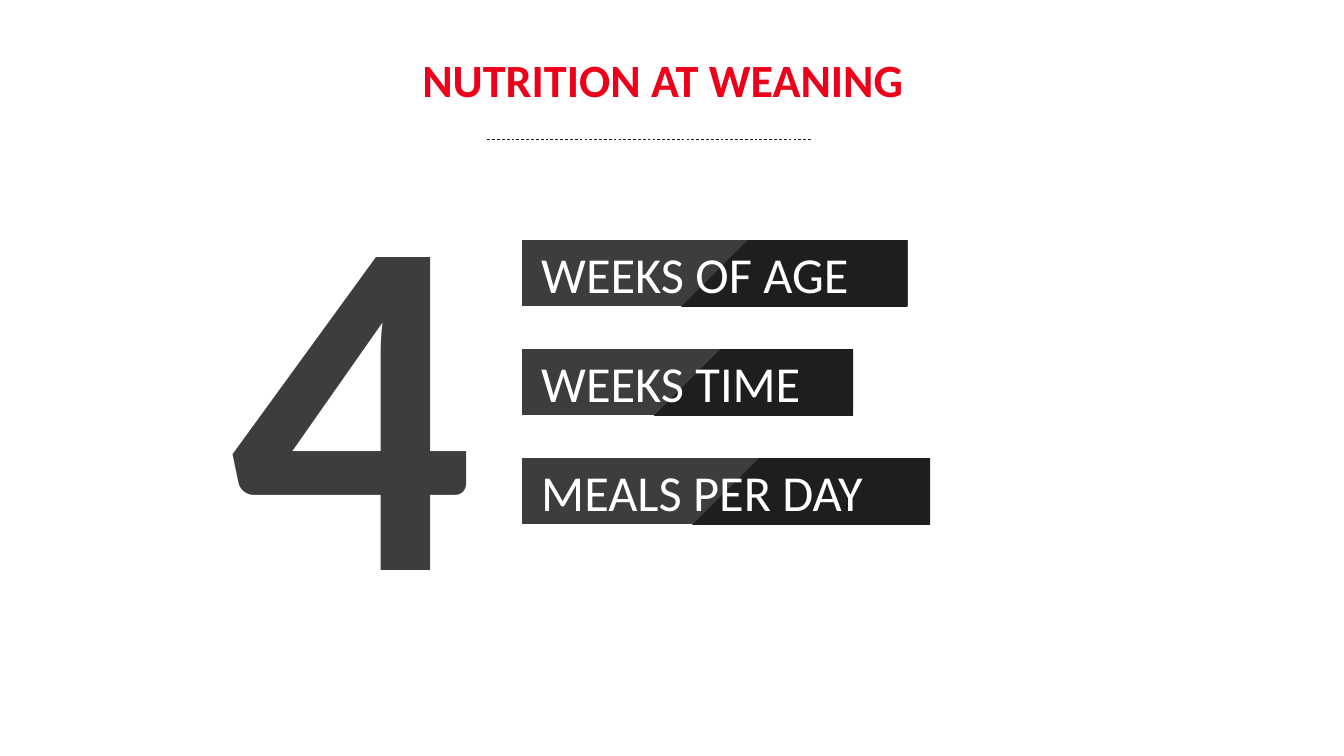
"""Builds the "Nutrition at weaning" slide."""
from dataclasses import dataclass

import pptx
import pptx.dml.color
import pptx.enum.dml
import pptx.enum.shapes
import pptx.enum.text
import pptx.oxml
import pptx.oxml.ns
import pptx.util

Inches = pptx.util.Inches
RGB = pptx.dml.color.RGBColor.from_string
Anchor = pptx.enum.text.MSO_ANCHOR


@dataclass(frozen=True)
class Theme:
    font: str = "Calibri"
    red: str = "EC001A"
    grey: str = "3D3D3C"
    black: str = "1E1E1E"
    white: str = "FFFFFF"
    numeral_size: int = 689
    title_size: int = 66
    label_size: int = 72


theme = Theme()


def write(shape, text, size, color, bold=False, wrap=True, anchor=Anchor.TOP):
    frame = shape.text_frame
    frame.word_wrap = wrap
    frame.auto_size = pptx.enum.text.MSO_AUTO_SIZE.SHAPE_TO_FIT_TEXT
    frame.vertical_anchor = anchor
    paragraph = frame.paragraphs[0]
    paragraph.text = text
    paragraph.font.name = theme.font
    paragraph.font.size = pptx.util.Pt(size)
    paragraph.font.bold = bold
    paragraph.font.color.rgb = RGB(color)
    return paragraph


deck = pptx.Presentation()
deck.slide_width = Inches(26.67)
deck.slide_height = Inches(15)
slide = deck.slides.add_slide(deck.slide_layouts[6])

numeral = slide.shapes.add_textbox(Inches(4.45), Inches(1.65), Inches(8.04), Inches(11.7))
write(numeral, "4", theme.numeral_size, theme.grey, bold=True, anchor=Anchor.MIDDLE)

title = slide.shapes.add_textbox(Inches(7.85), Inches(1.09), Inches(10.61), Inches(1.1))
heading = write(title, "NUTRITION AT WEANING", theme.title_size, theme.red, bold=True, wrap=False)
heading.alignment = pptx.enum.text.PP_ALIGN.CENTER
heading.line_spacing = 0.9

labels = [("WEEKS OF AGE", 7.66), ("WEEKS TIME", 6.58), ("MEALS PER DAY", 8.11)]
for row, (label, width) in enumerate(labels):
    bar = slide.shapes.add_shape(
        pptx.enum.shapes.MSO_SHAPE.RECTANGLE,
        Inches(10.35), Inches(4.77 + 2.16 * row), Inches(width), Inches(1.31),
    )
    bar.shadow.inherit = False
    bar.line.fill.background()
    bar.fill.gradient()
    bar.fill.gradient_angle = 315
    for stop, color in zip(bar.fill.gradient_stops, (theme.grey, theme.black)):
        stop.position = 0.5
        stop.color.rgb = RGB(color)
    bar.text_frame.margin_left = Inches(0.39)
    caption = write(bar, label, theme.label_size, theme.white)
    caption.alignment = pptx.enum.text.PP_ALIGN.LEFT

divider = slide.shapes.add_connector(
    pptx.enum.shapes.MSO_CONNECTOR.STRAIGHT,
    Inches(9.67), Inches(2.76), Inches(16.12), Inches(2.76),
)
divider.line.color.rgb = RGB(theme.black)
divider.line.width = pptx.util.Pt(1)
divider.line.dash_style = pptx.enum.dml.MSO_LINE.DASH
divider_properties = divider.element.spPr
divider_properties.append(pptx.oxml.parse_xml(f"<a:effectLst {pptx.oxml.ns.nsdecls('a')}/>"))

deck.save("out.pptx")
